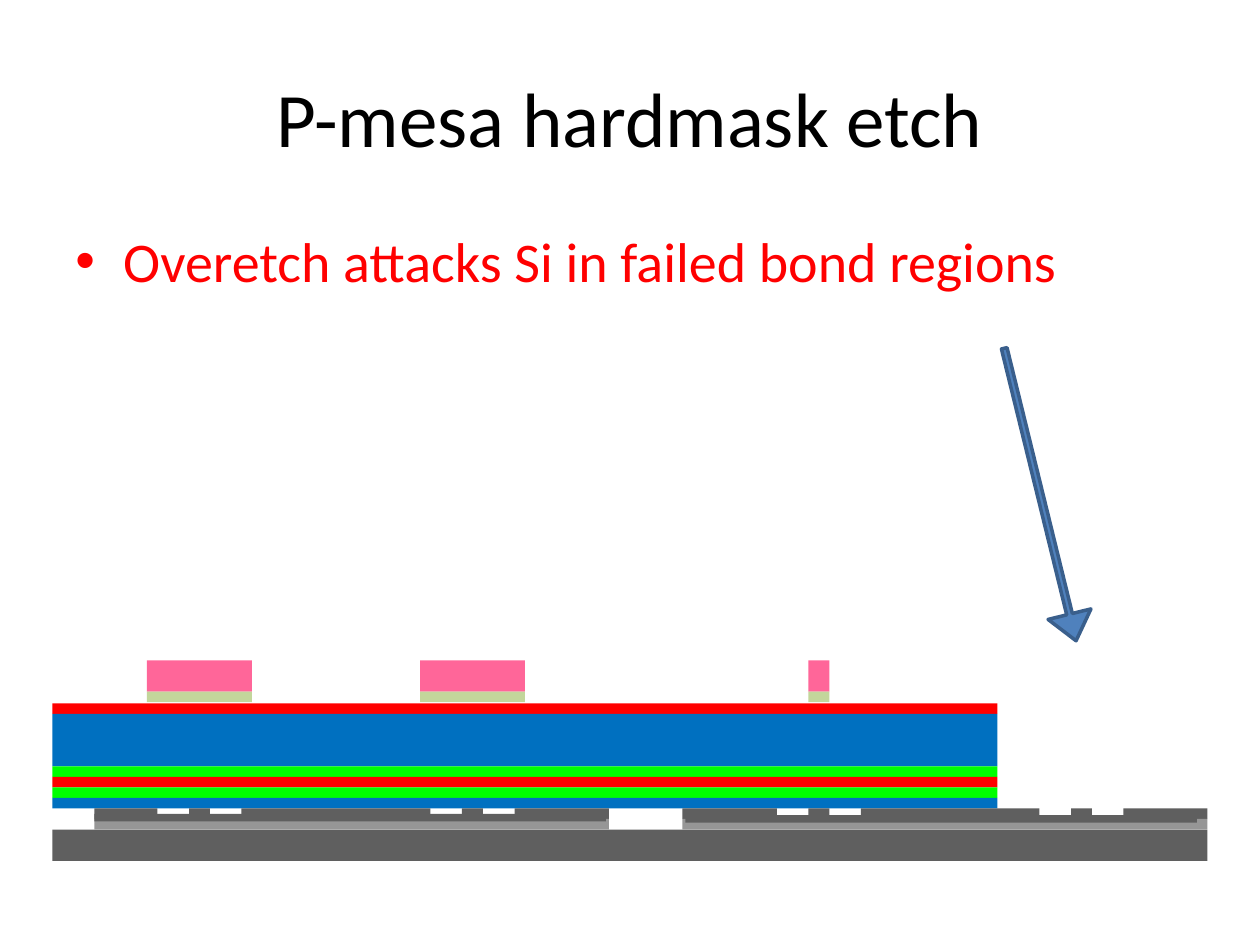
import pptx
import pptx.util
import pptx.dml.color
import pptx.enum.shapes
import pptx.enum.text
import lxml.etree

Inches = pptx.util.Inches
SHAPES = pptx.enum.shapes.MSO_SHAPE
ANCHOR = pptx.enum.text.MSO_ANCHOR

TITLE = "P-mesa hardmask etch"
BULLET = "Overetch attacks Si in failed bond regions"

GRID = 1 / 12
EPI = [(5, 90)]
MESAS = [(14, 10), (40, 10), (77, 2)]
SILICON = [(9, 6), (18, 2), (23, 18), (44, 2), (49, 9), (65, 9),
           (77, 2), (82, 17), (102, 2), (107, 8)]
OXIDE = [(9, 49), (65, 50)]
SUBSTRATE = [(5, 110)]

# color, top and height in inches, spans as (left, width) in grid units
LAYERS = [
    ("FF6699", 5.24, 0.25, MESAS),
    ("C3D69B", 5.49, GRID, MESAS),
    ("FF0000", 67 * GRID, GRID, EPI),
    ("0070C0", 68 * GRID, 5 * GRID, EPI),
    ("00FF00", 73 * GRID, GRID, EPI),
    ("FF0000", 74 * GRID, GRID, EPI),
    ("00FF00", 75 * GRID, GRID, EPI),
    ("0070C0", 76 * GRID, GRID, EPI),
    ("5F5F5F", 77 * GRID, GRID, SILICON),
    ("969696", 78 * GRID, GRID, OXIDE),
    ("5F5F5F", 79 * GRID, 3 * GRID, SUBSTRATE),
]
TRENCH_FLOORS = [(0.75, 6.46), (5.44, 6.47)]


def color(hex_code):
    return pptx.dml.color.RGBColor.from_string(hex_code)


def add_filled(slide, kind, left, top, width, height, fill):
    part = slide.shapes.add_shape(
        kind, Inches(left), Inches(top), Inches(width), Inches(height))
    part.shadow.inherit = False
    part.fill.solid()
    part.fill.fore_color.rgb = color(fill)
    part.line.fill.background()
    return part


def add_text(slide, text, top, height, size, hex_code, anchor):
    frame = slide.shapes.add_textbox(
        Inches(0.5), Inches(top), Inches(9), Inches(height)).text_frame
    frame.word_wrap = True
    frame.vertical_anchor = anchor
    paragraph = frame.paragraphs[0]
    paragraph.text = text
    paragraph.font.name = "Calibri"
    paragraph.font.size = pptx.util.Pt(size)
    paragraph.font.color.rgb = color(hex_code)
    return paragraph


def add_bullet(paragraph):
    properties = paragraph._p.get_or_add_pPr()
    properties.set("marL", str(Inches(0.38)))
    properties.set("indent", str(Inches(-0.38)))
    namespace = "{http://schemas.openxmlformats.org/drawingml/2006/main}"
    font = lxml.etree.Element(namespace + "buFont", typeface="Arial")
    mark = lxml.etree.Element(namespace + "buChar", char="•")
    properties.insert(0, font)
    properties.insert(1, mark)


def main():
    deck = pptx.Presentation()
    deck.slide_width, deck.slide_height = Inches(10), Inches(7.5)
    slide = deck.slides.add_slide(deck.slide_layouts[6])

    title = add_text(slide, TITLE, 0.3, 1.25, 44, "000000", ANCHOR.MIDDLE)
    title.alignment = pptx.enum.text.PP_ALIGN.CENTER
    add_bullet(add_text(slide, BULLET, 1.75, 2.58, 32, "FF0000", ANCHOR.TOP))

    for fill, top, height, spans in LAYERS:
        for left, width in spans:
            add_filled(slide, SHAPES.RECTANGLE, left * GRID, top,
                       width * GRID, height, fill)
    for left, top in TRENCH_FLOORS:
        add_filled(slide, SHAPES.RECTANGLE, left, top, 4.06, 0.06, "5F5F5F")

    arrow = add_filled(slide, SHAPES.RIGHT_ARROW, 7.06, 3.75, 2.39, 0.35, "4F81BD")
    arrow.rotation = 76.2
    arrow.adjustments[0] = 0.13
    arrow.adjustments[1] = 0.62
    arrow.line.color.rgb = color("3A5F8C")
    arrow.line.width = pptx.util.Pt(2)

    deck.save("out.pptx")


if __name__ == "__main__":
    main()
